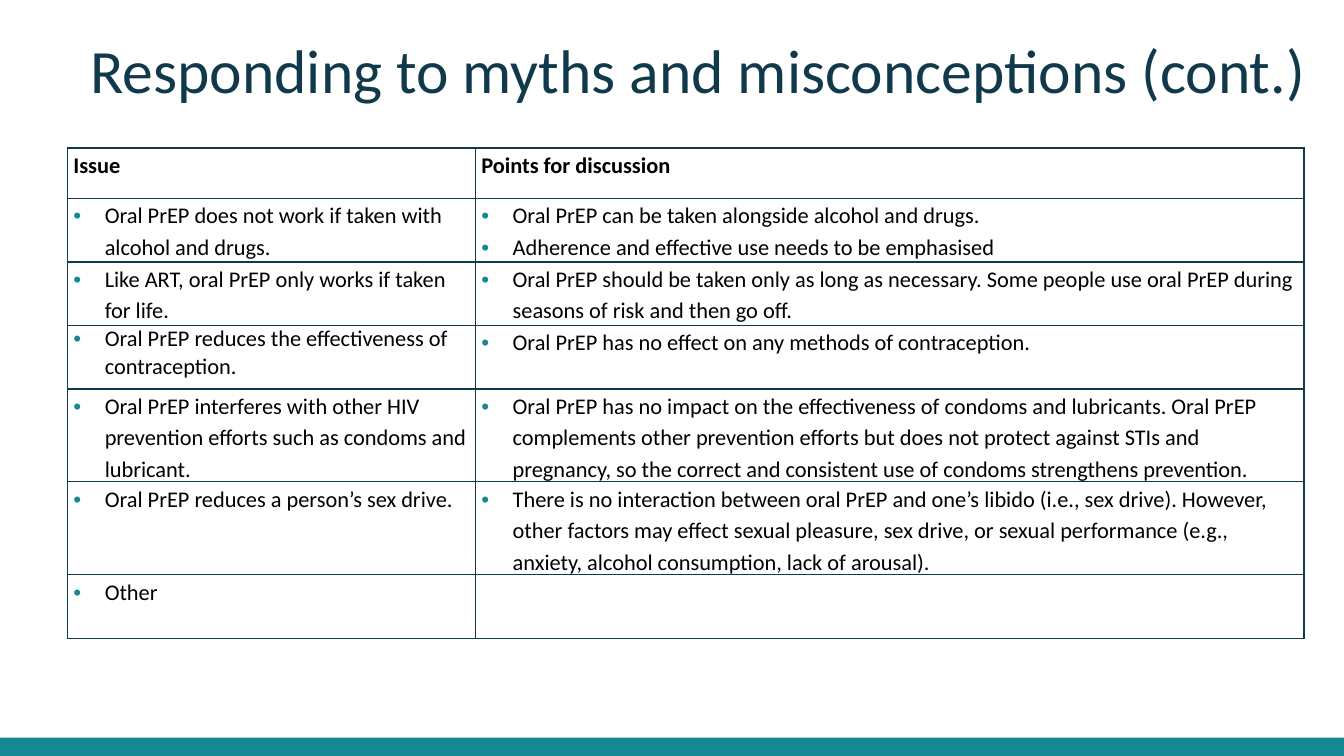
from lxml.etree import SubElement
from pptx import Presentation
from pptx.dml.color import RGBColor
from pptx.enum.shapes import MSO_SHAPE
from pptx.enum.text import MSO_ANCHOR
from pptx.oxml.ns import qn
from pptx.util import Cm, Pt

# Content
TITLE = "Responding to myths and misconceptions (cont.)"
HEADINGS = ["Issue", "Points for discussion"]
# Each row: height in cm, issue, points for discussion
ROWS = [
    (1.6, "Oral PrEP does not work if taken with alcohol and drugs.",
     ["Oral PrEP can be taken alongside alcohol and drugs.",
      "Adherence and effective use needs to be emphasised"]),
    (1.6, "Like ART, oral PrEP only works if taken for life.",
     ["Oral PrEP should be taken only as long as necessary. Some people use oral PrEP "
      "during seasons of risk and then go off."]),
    (1.6, "Oral PrEP reduces the effectiveness of contraception.",
     ["Oral PrEP has no effect on any methods of contraception."]),
    (2.34, "Oral PrEP interferes with other HIV prevention efforts such as condoms and lubricant.",
     ["Oral PrEP has no impact on the effectiveness of condoms and lubricants. Oral PrEP "
      "complements other prevention efforts but does not protect against STIs and pregnancy, "
      "so the correct and consistent use of condoms strengthens prevention."]),
    (2.34, "Oral PrEP reduces a person’s sex drive.",
     ["There is no interaction between oral PrEP and one’s libido (i.e., sex drive). However, "
      "other factors may effect sexual pleasure, sex drive, or sexual performance (e.g., "
      "anxiety, alcohol consumption, lack of arousal)."]),
    (1.6, "Other", []),
]
SINGLE_SPACED_ISSUE = "Oral PrEP reduces the effectiveness of contraception."
HEADER_HEIGHT = 1.27
COLUMN_WIDTHS = [10.28, 20.88]
NAVY, TEAL, BLACK = "10394B", "178793", "000000"


def color(value):
    return RGBColor.from_string(value)


def add_bullet(paragraph):
    properties = paragraph._p.get_or_add_pPr()
    properties.set("marL", str(Cm(0.79)))
    properties.set("indent", str(-Cm(0.79)))
    bullet_color = SubElement(properties, qn("a:buClr"))
    SubElement(bullet_color, qn("a:srgbClr")).set("val", TEAL)
    SubElement(properties, qn("a:buFont")).set("typeface", "Arial")
    SubElement(properties, qn("a:buChar")).set("char", "•")


def write(frame, lines, size=16, font_color=BLACK, bold=False, spacing=1.15, bullet=False):
    for index, line in enumerate(lines):
        paragraph = frame.add_paragraph() if index else frame.paragraphs[0]
        paragraph.line_spacing = spacing
        if bullet:
            add_bullet(paragraph)
        run = paragraph.add_run()
        run.text = line
        run.font.name = "Calibri"
        run.font.size = Pt(size)
        run.font.bold = bold
        run.font.color.rgb = color(font_color)


def format_cell(cell):
    cell.margin_left = cell.margin_right = Cm(0.15)
    cell.margin_top = cell.margin_bottom = 0
    cell.vertical_anchor = MSO_ANCHOR.TOP
    properties = cell._tc.get_or_add_tcPr()
    for side in ("lnL", "lnR", "lnT", "lnB"):
        border = SubElement(properties, qn("a:" + side))
        border.set("w", str(Pt(1)))
        fill = SubElement(border, qn("a:solidFill"))
        SubElement(fill, qn("a:srgbClr")).set("val", NAVY)
    cell.fill.background()


presentation = Presentation()
presentation.slide_width, presentation.slide_height = Cm(33.87), Cm(19.05)
slide = presentation.slides.add_slide(presentation.slide_layouts[6])

# Bottom band
band = slide.shapes.add_shape(MSO_SHAPE.RECTANGLE, 0, Cm(18.59), Cm(34.04), Cm(0.53))
band.shadow.inherit = False
band.fill.solid()
band.fill.fore_color.rgb = color(TEAL)
band.line.fill.background()

# Title
title = slide.shapes.add_textbox(Cm(2.03), Cm(0.97), Cm(31.83), Cm(2.01))
title.text_frame.word_wrap = True
write(title.text_frame, [TITLE], size=44, font_color=NAVY, spacing=Pt(44.8))

# Table
heights = [HEADER_HEIGHT] + [height for height, issue, points in ROWS]
table = slide.shapes.add_table(len(heights), len(COLUMN_WIDTHS), Cm(1.7), Cm(3.73),
                               Cm(sum(COLUMN_WIDTHS)), Cm(sum(heights))).table
table.horz_banding = False
for column, width in zip(table.columns, COLUMN_WIDTHS):
    column.width = Cm(width)
for row, height in zip(table.rows, heights):
    row.height = Cm(height)
for cell in table.iter_cells():
    format_cell(cell)
for column_index, heading in enumerate(HEADINGS):
    write(table.cell(0, column_index).text_frame, [heading], bold=True)
for row_index, (height, issue, points) in enumerate(ROWS, start=1):
    issue_spacing = 1.0 if issue == SINGLE_SPACED_ISSUE else 1.15
    write(table.cell(row_index, 0).text_frame, [issue], spacing=issue_spacing, bullet=True)
    write(table.cell(row_index, 1).text_frame, points, bullet=True)

presentation.save("out.pptx")
